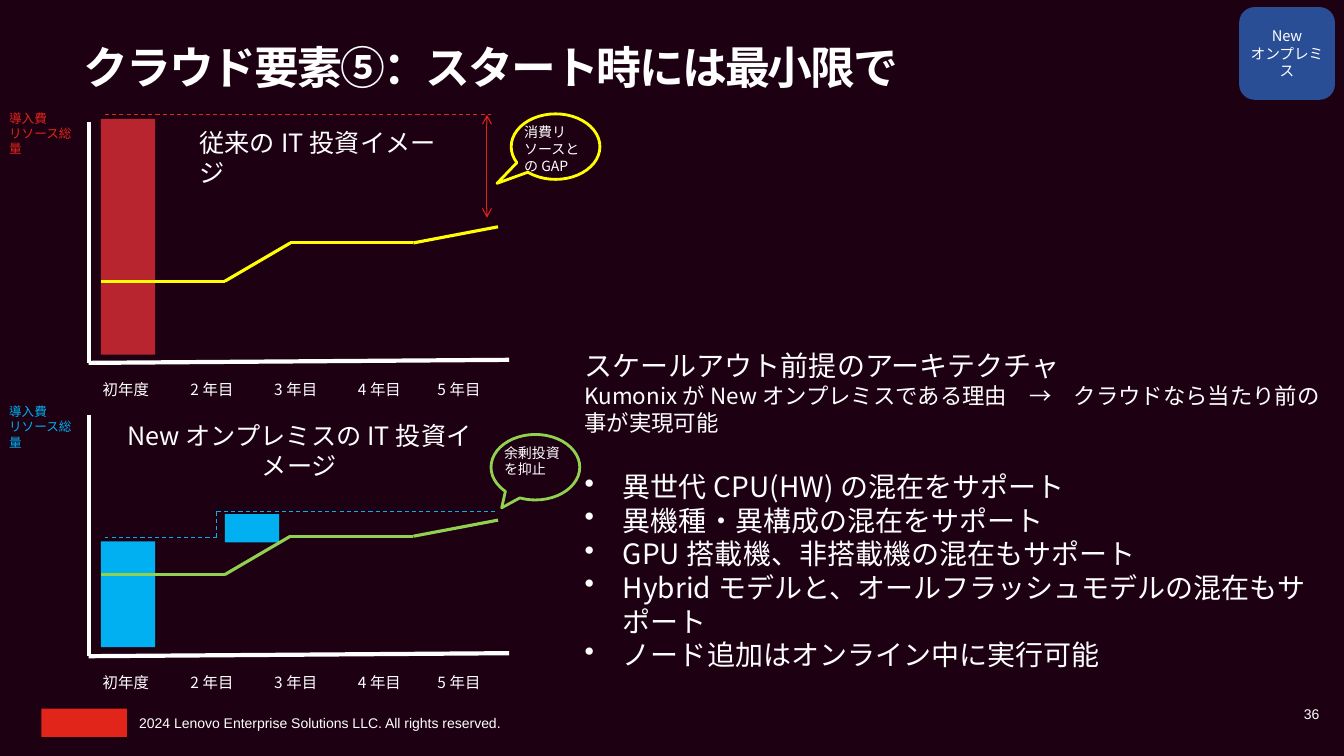
from dataclasses import dataclass
from typing import Any, NamedTuple

from lxml.etree import SubElement
from pptx import Presentation
from pptx.dml.color import RGBColor
from pptx.enum.dml import MSO_LINE_DASH_STYLE as Dash
from pptx.enum.shapes import MSO_CONNECTOR as Link, MSO_SHAPE as Kind
from pptx.enum.text import MSO_ANCHOR as Anchor, PP_ALIGN as Align
from pptx.oxml.ns import qn
from pptx.util import Inches, Pt

DARK = RGBColor(0x1E, 0x00, 0x13)
WHITE = RGBColor(0xFF, 0xFF, 0xFF)
RED = RGBColor(0xE1, 0x25, 0x1B)
BRICK = RGBColor(0xB8, 0x25, 0x2E)
YELLOW = RGBColor(0xFF, 0xFF, 0x00)
GREEN = RGBColor(0x92, 0xD0, 0x50)
SKY = RGBColor(0x00, 0xB0, 0xF0)
NAVY = RGBColor(0x29, 0x4E, 0x95)
NOTO = "Noto Sans CJK JP"
ARIAL = "Arial"
STEP = 2.91
PAD = (0.1, 0.05, 0.1, 0.05)
FLAT = (0, 0, 0, 0)
INDENT = Inches(0.38)

Rect = tuple[float, float, float, float]


class Words(NamedTuple):
    text: str
    size: float


@dataclass
class Para:
    rows: list[Words]
    bullet: bool = False
    before: float = 0


@dataclass
class Style:
    color: RGBColor = WHITE
    font: str = NOTO
    bold: bool = False
    pad: Rect = PAD
    align: Align = Align.LEFT
    anchor: Anchor = Anchor.TOP
    space: float = 1.0
    track: int = 0


@dataclass
class Wire:
    start: tuple[float, float]
    end: tuple[float, float]
    color: RGBColor
    width: float
    dash: bool = False
    arrow: bool = False


@dataclass
class Bubble:
    at: Rect
    tip: tuple[float, float]
    text: str


@dataclass
class Panel:
    top: float
    title: str
    place: tuple[float, float]
    align: Align
    hue: RGBColor
    trend: RGBColor
    bars: list[Rect]
    fill: RGBColor
    bubble: Bubble


def assign(item: Any, values: dict[str, Any]) -> None:
    for name, value in values.items():
        setattr(item, name, value)


def plain(*texts: str, size: float) -> list[Para]:
    return [Para([Words(text, size)]) for text in texts]


def write(frame: Any, paras: list[Para], style: Style) -> None:
    left, top, right, bottom = map(Inches, style.pad)
    assign(frame, {"word_wrap": True, "vertical_anchor": style.anchor,
                   "margin_left": left, "margin_top": top,
                   "margin_right": right, "margin_bottom": bottom})
    for index, para in enumerate(paras):
        line = frame.add_paragraph() if index else frame.paragraphs[0]
        assign(line, {"alignment": style.align, "line_spacing": style.space})
        if para.before:
            line.space_before = Pt(para.before)
        if para.bullet:
            props = line._p.get_or_add_pPr()
            props.set("marL", str(INDENT))
            props.set("indent", str(-INDENT))
            SubElement(props, qn("a:buChar")).set("char", "•")
        for order, words in enumerate(para.rows):
            if order:
                line.add_line_break()
            run = line.add_run()
            run.text = words.text
            assign(run.font, {"name": style.font, "size": Pt(words.size), "bold": style.bold})
            run.font.color.rgb = style.color
            props = run._r.get_or_add_rPr()
            SubElement(props, qn("a:ea")).set("typeface", style.font)
            if style.track:
                props.set("spc", str(style.track))


def label(slide: Any, at: Rect, paras: list[Para], style: Style = Style()) -> None:
    write(slide.shapes.add_textbox(*map(Inches, at)).text_frame, paras, style)


def block(slide: Any, at: Rect, fill: RGBColor, kind: Kind = Kind.RECTANGLE) -> Any:
    shape = slide.shapes.add_shape(kind, *map(Inches, at))
    shape.shadow.inherit = False
    shape.fill.solid()
    shape.fill.fore_color.rgb = fill
    shape.line.fill.background()
    return shape


def draw_wire(slide: Any, wire: Wire) -> None:
    ends = map(Inches, (*wire.start, *wire.end))
    link = slide.shapes.add_connector(Link.STRAIGHT, *ends)
    link.line.width = Pt(wire.width)
    link.line.color.rgb = wire.color
    if wire.dash:
        link.line.dash_style = Dash.DASH
    if wire.arrow:
        for tag in ("a:headEnd", "a:tailEnd"):
            SubElement(link.line._get_or_add_ln(), qn(tag)).set("type", "arrow")
    SubElement(link._element.spPr, qn("a:effectLst"))


def draw_bubble(slide: Any, bubble: Bubble, color: RGBColor) -> None:
    shape = block(slide, bubble.at, DARK, Kind.OVAL_CALLOUT)
    shape.fill.background()
    shape.line.color.rgb = color
    shape.line.width = Pt(2)
    for index, value in enumerate(bubble.tip):
        shape.adjustments[index] = value
    write(shape.text_frame, plain(bubble.text, size=10), Style(pad=FLAT))


def draw_panel(slide: Any, panel: Panel) -> None:
    top = panel.top
    for start, end in AXES:
        draw_wire(slide, Wire((start[0], start[1] + top), (end[0], end[1] + top), WHITE, 3))
    for bar in panel.bars:
        block(slide, bar, panel.fill)
    for left, year in YEARS.items():
        label(slide, (left, 3.72 + top, 0.71, 0.29), plain(year, size=11))
    label(slide, (0.05, 1.05 + top, 0.78, 0.4), plain("導入費", "リソース総量", size=9),
          Style(color=panel.hue, pad=(0.04, 0.05, 0.04, 0.05)))
    for start, end in zip(TREND, TREND[1:]):
        draw_wire(slide, Wire((start[0], start[1] + top), (end[0], end[1] + top),
                              panel.trend, 2.25))
    draw_bubble(slide, panel.bubble, panel.trend)
    left, width = panel.place
    label(slide, (left, 1.21 + top, width, 0.4), plain(panel.title, size=18),
          Style(align=panel.align))


AXES = [((0.88, 1.21), (0.88, 3.6)), ((5.05, 3.57), (0.88, 3.6))]
YEARS = {0.92: "初年度", 1.79: "2年目", 2.62: "3年目", 3.45: "4年目", 4.24: "5年目"}
TREND = [(1, 2.79), (2.23, 2.79), (2.88, 2.41), (4.1, 2.41), (4.94, 2.25)]
PANELS = [
    Panel(0, "従来のIT投資イメージ", (1.88, 2.72), Align.LEFT, RED, YELLOW,
          [(1, 1.18, 0.54, 2.34)], BRICK,
          Bubble((5.07, 1.13, 0.88, 0.65), (-0.66, 0.56), "消費リソースとのGAP")),
    Panel(STEP, "NewオンプレミスのIT投資イメージ", (1, 3.94), Align.CENTER, SKY, GREEN,
          [(1, 5.37, 0.54, 1.05), (2.23, 5.1, 0.54, 0.28)], SKY,
          Bubble((4.87, 4.31, 0.88, 0.65), (-0.38, 0.62), "余剰投資を抑止")),
]
WIRES = [
    Wire((4.83, 1.14), (4.83, 2.16), RED, 0.75, arrow=True),
    Wire((1.04, 1.14), (4.87, 1.14), RED, 0.75, dash=True),
    Wire((2.15, 5.07), (4.94, 5.07), SKY, 0.75, dash=True),
    Wire((2.15, 5.33), (2.15, 5.07), SKY, 0.75, dash=True),
    Wire((2.15, 5.33), (1.04, 5.33), SKY, 0.75, dash=True),
]
POINTS = ["異世代CPU(HW)の混在をサポート", "異機種・異構成の混在をサポート",
          "GPU搭載機、非搭載機の混在もサポート",
          "Hybridモデルと、オールフラッシュモデルの混在もサポート",
          "ノード追加はオンライン中に実行可能"]
LEAD = Para([Words("スケールアウト前提のアーキテクチャ", 20),
             Words("KumonixがNewオンプレミスである理由　→　クラウドなら当たり前の事が実現可能", 16)])


def main() -> None:
    deck = Presentation()
    assign(deck, {"slide_width": Inches(13.33), "slide_height": Inches(7.5)})
    slide = deck.slides.add_slide(deck.slide_layouts[6])
    slide.background.fill.solid()
    slide.background.fill.fore_color.rgb = DARK
    block(slide, (0.41, 7.03, 0.85, 0.28), RED)
    label(slide, (1.38, 7.09, 4.5, 0.17),
          plain("2024 Lenovo Enterprise Solutions LLC. All rights reserved.", size=10),
          Style(font=ARIAL, pad=FLAT))
    label(slide, (0.83, 0.48, 11.67, 0.46), plain("クラウド要素⑤：スタート時には最小限で", size=32),
          Style(bold=True, pad=FLAT, space=0.85, track=-150))
    for panel in PANELS:
        draw_panel(slide, panel)
    for wire in WIRES:
        draw_wire(slide, wire)
    points = [Para([Words(text, 20)], True, 0 if index else 24)
              for index, text in enumerate(POINTS)]
    label(slide, (5.7, 3.41, 7.56, 2.73), [LEAD, *points])
    badge = block(slide, (12.29, 0.07, 0.95, 0.92), NAVY, Kind.ROUNDED_RECTANGLE)
    write(badge.text_frame, [Para([Words("New", 10.5), Words("オンプレミス", 10.5)])],
          Style(pad=(0.04, 0, 0.04, 0), align=Align.CENTER, anchor=Anchor.MIDDLE))
    label(slide, (12.77, 7, 0.48, 0.17), plain("36", size=10),
          Style(font=ARIAL, pad=FLAT, align=Align.CENTER, anchor=Anchor.MIDDLE))
    deck.save("out.pptx")


if __name__ == "__main__":
    main()
